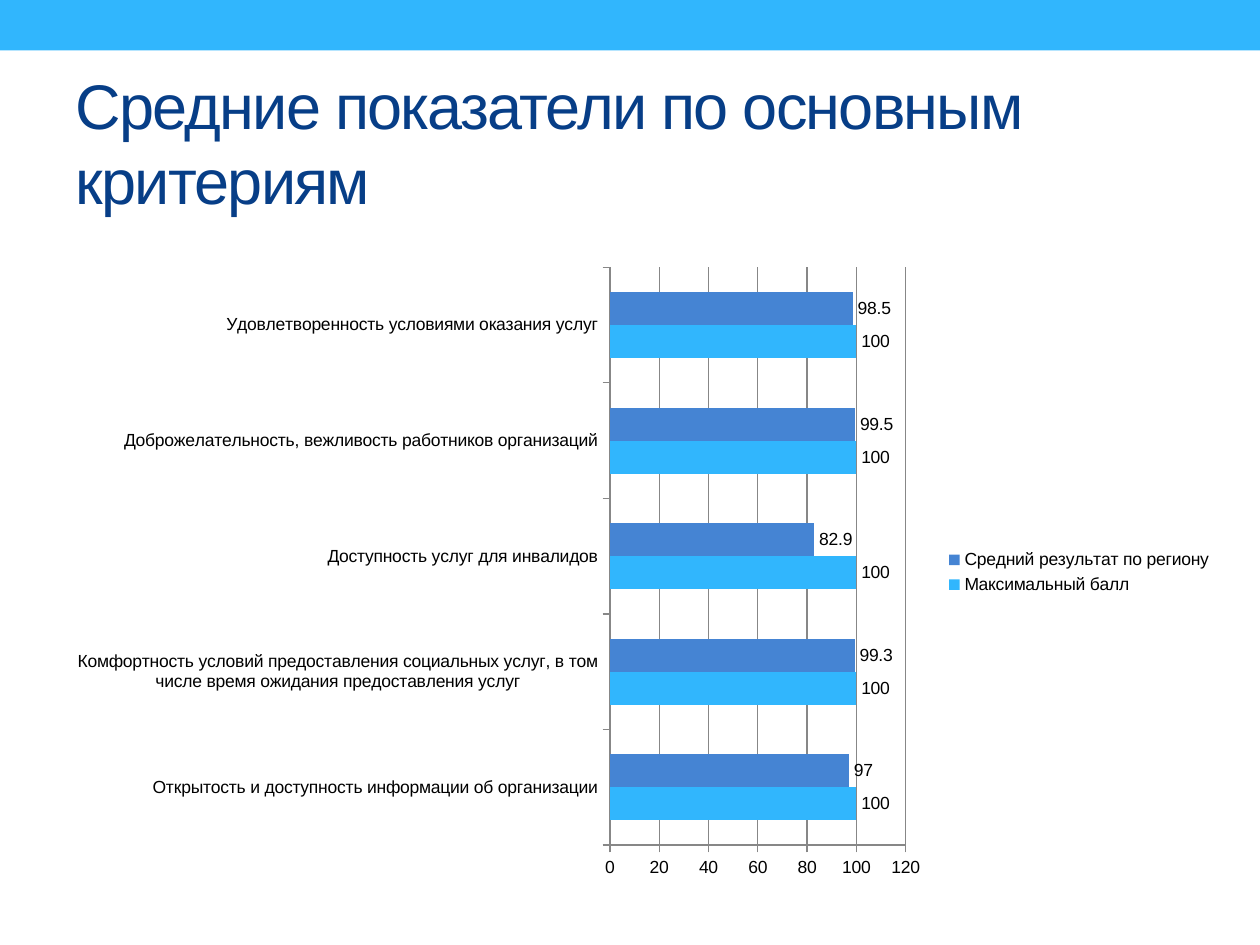
from pptx import Presentation
from pptx.chart.data import CategoryChartData
from pptx.dml.color import RGBColor
from pptx.enum.chart import XL_CHART_TYPE, XL_LABEL_POSITION, XL_LEGEND_POSITION, XL_TICK_MARK
from pptx.enum.shapes import MSO_SHAPE
from pptx.enum.text import MSO_ANCHOR, MSO_AUTO_SIZE, PP_ALIGN
from pptx.util import Pt

BAR = XL_CHART_TYPE.BAR_CLUSTERED
OUT_END = XL_LABEL_POSITION.OUTSIDE_END
RIGHT = XL_LEGEND_POSITION.RIGHT
TICK_OUT, TICK_NONE = XL_TICK_MARK.OUTSIDE, XL_TICK_MARK.NONE
RECT = MSO_SHAPE.RECTANGLE
MIDDLE = MSO_ANCHOR.MIDDLE
NO_FIT = MSO_AUTO_SIZE.NONE
LEFT = PP_ALIGN.LEFT

SKY = RGBColor(0x31, 0xB6, 0xFD)
BLUE = RGBColor(0x45, 0x84, 0xD3)
NAVY = RGBColor(0x07, 0x3E, 0x87)
BLACK = RGBColor(0, 0, 0)
GRAY = RGBColor(0x87, 0x87, 0x87)
FACE = "Arial"

TITLE = "Средние показатели по основным критериям"
TOPICS = [
    "Открытость и доступность информации об организации",
    "Комфортность условий предоставления социальных услуг, в том числе время ожидания предоставления услуг",
    "Доступность услуг для инвалидов",
    "Доброжелательность, вежливость работников организаций",
    "Удовлетворенность условиями оказания услуг",
]
SCORES = [
    ("Максимальный балл", [100] * len(TOPICS), SKY),
    ("Средний результат по региону", [97, 99.3, 82.9, 99.5, 98.5], BLUE),
]


def apply(item, **values):
    """Set each named attribute on the item."""
    for name, value in values.items():
        setattr(item, name, value)


def style(font, size, color):
    """Give a font its face, size and colour."""
    apply(font, name=FACE, size=Pt(size))
    font.color.rgb = color


def add_band(slide, box):
    """Draw the plain band along the top."""
    band = slide.shapes.add_shape(RECT, *map(Pt, box))
    band.shadow.inherit = False
    band.fill.solid()
    band.fill.fore_color.rgb = SKY
    band.line.fill.background()


def add_title(slide, box):
    """Place and format the title placeholder."""
    title = slide.shapes.title
    apply(title, **dict(zip(("left", "top", "width", "height"), map(Pt, box))))
    frame = title.text_frame
    frame.text = TITLE
    apply(frame, auto_size=NO_FIT, word_wrap=True, vertical_anchor=MIDDLE)
    para = frame.paragraphs[0]
    para.alignment = LEFT
    run = para.runs[0]
    style(run.font, 36, NAVY)
    run.font._element.set("spc", "-100")


def add_scores(slide, box):
    """Add the bar chart of scores with its legend."""
    data = CategoryChartData()
    data.categories = TOPICS
    for name, values, _ in SCORES:
        data.add_series(name, values)
    chart = slide.shapes.add_chart(BAR, *map(Pt, box), data).chart
    apply(chart, has_title=False, has_legend=True)
    style(chart.font, 10, BLACK)
    apply(chart.legend, position=RIGHT, include_in_layout=False)

    plot = chart.plots[0]
    apply(plot, gap_width=150, overlap=0, vary_by_categories=False)
    for series, (_, _, color) in zip(plot.series, SCORES):
        series.format.fill.solid()
        series.format.fill.fore_color.rgb = color
        labels = series.data_labels
        apply(labels, show_value=True, position=OUT_END)
        style(labels.font, 10, BLACK)

    scale = chart.value_axis
    apply(scale, minimum_scale=0, maximum_scale=120, major_unit=20,
          has_major_gridlines=True)
    scale.major_gridlines.format.line.color.rgb = GRAY
    for axis in (chart.category_axis, scale):
        apply(axis, major_tick_mark=TICK_OUT, minor_tick_mark=TICK_NONE)
        axis.format.line.color.rgb = GRAY
        style(axis.tick_labels.font, 10, BLACK)


def main():
    """Build the slide and save it."""
    deck = Presentation()
    apply(deck, slide_width=Pt(720), slide_height=Pt(540))
    slide = deck.slides.add_slide(deck.slide_layouts[5])
    add_band(slide, (0, 0, 720, 28.8))
    add_title(slide, (36, 42, 648, 78))
    add_scores(slide, (31, 145.5, 669, 363))
    deck.save("out.pptx")


if __name__ == "__main__":
    main()
